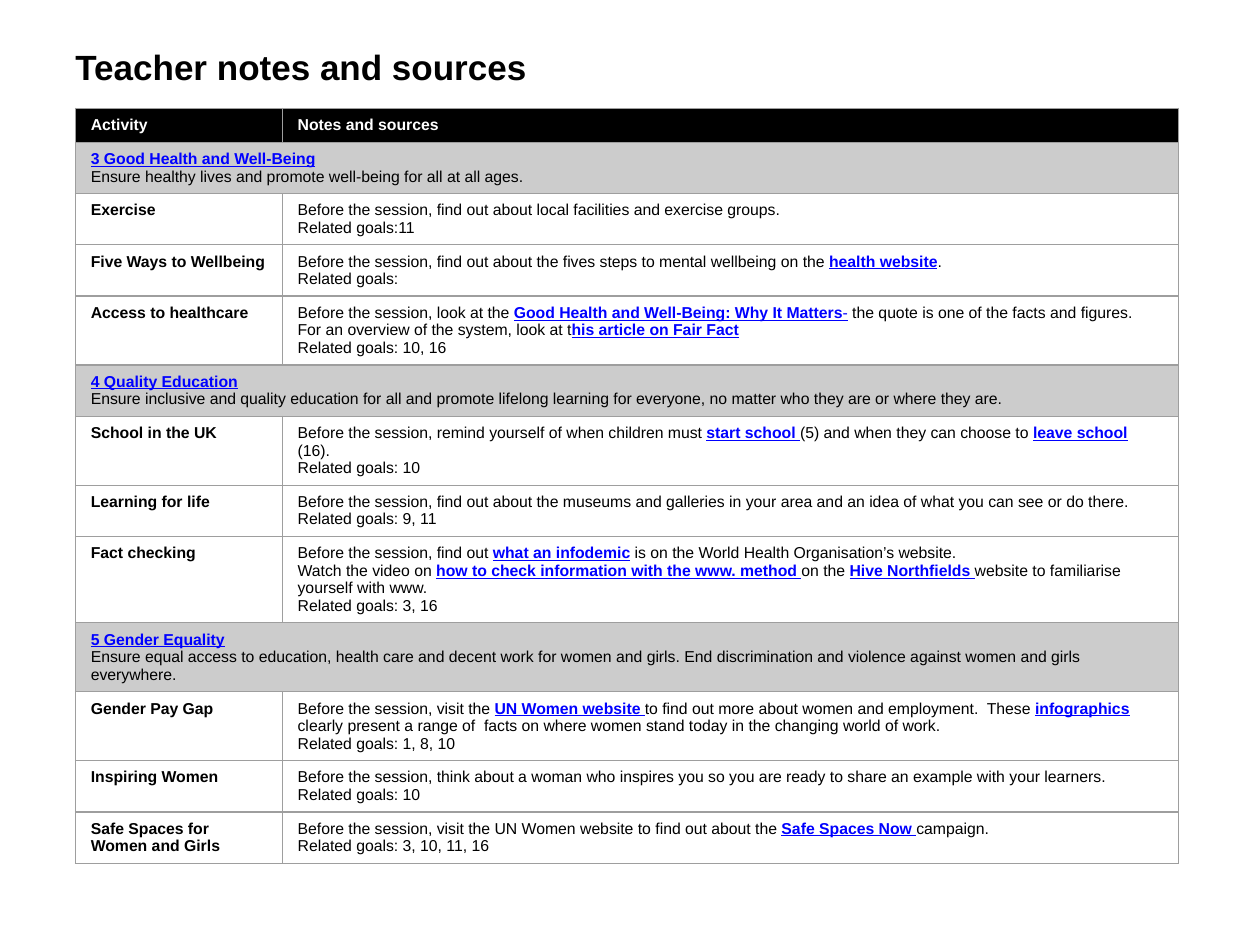
from dataclasses import dataclass
from typing import Union

from lxml import etree
from pptx import Presentation
from pptx import util as u
from pptx.dml.color import RGBColor
from pptx.enum import text as t
from pptx.oxml import ns

COLORS = {
    "ink": "000000",
    "paper": "FFFFFF",
    "link": "0000FF",
    "goal": "CCCCCC",
    "grid": "9E9E9E",
}
FONT = "Arial"
BORDER = u.Pt(0.75)
ROW_HEIGHT = u.Cm(0.69)
COLUMN_WIDTHS = (u.Cm(4.17), u.Cm(18.06))


@dataclass(frozen=True)
class Link:
    text: str
    bold: bool = True


Line = tuple[Union[str, Link], ...]


@dataclass(frozen=True)
class Activity:
    name: str
    notes: tuple[Line, ...]
    related: str


@dataclass(frozen=True)
class Goal:
    name: str
    aim: str
    activities: tuple[Activity, ...]


GOALS = (
    Goal("3 Good Health and Well-Being",
         "Ensure healthy lives and promote well-being for all at all ages.", (
        Activity("Exercise", (
            ("Before the session, find out about local facilities and exercise groups.",),
        ), "11"),
        Activity("Five Ways to Wellbeing", (
            ("Before the session, find out about the fives steps to mental wellbeing on the ",
             Link("health website"), "."),
        ), ""),
        Activity("Access to healthcare", (
            ("Before the session, look at the ",
             Link("Good Health and Well-Being: Why It Matters"), Link("-", bold=False),
             " the quote is one of the facts and figures."),
            ("For an overview of the system, look at t", Link("his article on Fair Fact")),
        ), " 10, 16"),
    )),
    Goal("4 Quality Education",
         "Ensure inclusive and quality education for all and promote lifelong learning "
         "for everyone, no matter who they are or where they are.", (
        Activity("School in the UK", (
            ("Before the session, remind yourself of when children must ",
             Link("start school "), "(5) and when they can choose to ",
             Link("leave school"), " (16)."),
        ), " 10"),
        Activity("Learning for life", (
            ("Before the session, find out about the museums and galleries in your area "
             "and an idea of what you can see or do there.",),
        ), " 9, 11"),
        Activity("Fact checking", (
            ("Before the session, find out ", Link("what an infodemic"),
             " is on the World Health Organisation’s website."),
            ("Watch the video on ", Link("how to check information with the www. method "),
             "on the ", Link("Hive Northfields"), Link(" ", bold=False),
             "website to familiarise yourself with www."),
        ), " 3, 16"),
    )),
    Goal("5 Gender Equality",
         "Ensure equal access to education, health care and decent work for women and girls. "
         "End discrimination and violence against women and girls everywhere.", (
        Activity("Gender Pay Gap", (
            ("Before the session, visit the ", Link("UN Women website "),
             "to find out more about women and employment.  These ", Link("infographics"),
             " clearly present a range of  facts on where women stand today "
             "in the changing world of work."),
        ), " 1, 8, 10"),
        Activity("Inspiring Women", (
            ("Before the session, think about a woman who inspires you so you are ready "
             "to share an example with your learners.",),
        ), " 10"),
        Activity("Safe Spaces for Women and Girls", (
            ("Before the session, visit the UN Women website to find out about the ",
             Link("Safe Spaces Now "), "campaign."),
        ), " 3, 10, 11, 16"),
    )),
)


def write(frame, *lines: Line, size: float = 9, color: str = "ink",
          bold: bool = False) -> None:
    frame.word_wrap = True
    for index, line in enumerate(lines):
        paragraph = frame.paragraphs[0] if index == 0 else frame.add_paragraph()
        paragraph.alignment = t.PP_ALIGN.LEFT
        paragraph.line_spacing = 1.0
        paragraph.space_before = paragraph.space_after = u.Pt(0)
        for part in line:
            linked = isinstance(part, Link)
            run = paragraph.add_run()
            run.text = part.text if linked else part
            run.font.name = FONT
            run.font.size = u.Pt(size)
            run.font.bold = part.bold if linked else bold
            run.font.underline = linked
            run.font.color.rgb = RGBColor.from_string(COLORS["link" if linked else color])


def add_borders(cell) -> None:
    properties = cell._tc.get_or_add_tcPr()
    for position, side in enumerate(("lnL", "lnR", "lnT", "lnB")):
        border = etree.Element(ns.qn(f"a:{side}"), w=str(BORDER))
        fill = etree.SubElement(border, ns.qn("a:solidFill"))
        etree.SubElement(fill, ns.qn("a:srgbClr"), val=COLORS["grid"])
        properties.insert(position, border)


def format_row(table, row: int, fill: str = "") -> None:
    table.rows[row].height = ROW_HEIGHT
    for cell in table.rows[row].cells:
        cell.margin_left = cell.margin_right = u.Cm(0.31)
        cell.margin_top = cell.margin_bottom = u.Cm(0.16)
        cell.vertical_anchor = t.MSO_ANCHOR.TOP
        if fill:
            cell.fill.solid()
            cell.fill.fore_color.rgb = RGBColor.from_string(COLORS[fill])
        else:
            cell.fill.background()
        add_borders(cell)


def add_header(table) -> None:
    format_row(table, 0, "ink")
    for column, heading in enumerate(("Activity", "Notes and sources")):
        write(table.cell(0, column).text_frame, (heading,), color="paper", bold=True)


def add_goal(table, row: int, goal: Goal) -> None:
    format_row(table, row, "goal")
    table.cell(row, 0).merge(table.cell(row, 1))
    write(table.cell(row, 0).text_frame, (Link(goal.name),), (goal.aim,))


def add_activity(table, row: int, activity: Activity) -> None:
    format_row(table, row)
    write(table.cell(row, 0).text_frame, (activity.name,), bold=True)
    write(table.cell(row, 1).text_frame, *activity.notes,
          (f"Related goals:{activity.related}",))


def add_heading(slide) -> None:
    heading = slide.shapes.title
    heading.left, heading.top = u.Cm(1.52), u.Cm(0.91)
    heading.width, heading.height = u.Cm(22.56), u.Cm(1.27)
    frame = heading.text_frame
    frame.margin_left = frame.margin_right = frame.margin_top = frame.margin_bottom = 0
    frame.vertical_anchor = t.MSO_ANCHOR.TOP
    frame.auto_size = t.MSO_AUTO_SIZE.NONE
    write(frame, ("Teacher notes and sources",), size=20, bold=True)


def add_notes_table(slide) -> None:
    row_count = 1 + sum(1 + len(goal.activities) for goal in GOALS)
    table = slide.shapes.add_table(row_count, len(COLUMN_WIDTHS), u.Cm(1.52), u.Cm(2.18),
                                   sum(COLUMN_WIDTHS), ROW_HEIGHT * row_count).table
    table.first_row = table.horz_banding = False
    for column, width in zip(table.columns, COLUMN_WIDTHS):
        column.width = width
    add_header(table)
    row = 1
    for goal in GOALS:
        add_goal(table, row, goal)
        for row, activity in enumerate(goal.activities, row + 1):
            add_activity(table, row, activity)
        row += 1


def main() -> None:
    deck = Presentation()
    deck.slide_width, deck.slide_height = u.Cm(25.4), u.Cm(19.05)
    slide = deck.slides.add_slide(deck.slide_layouts[5])
    add_heading(slide)
    add_notes_table(slide)
    deck.save("out.pptx")


if __name__ == "__main__":
    main()
